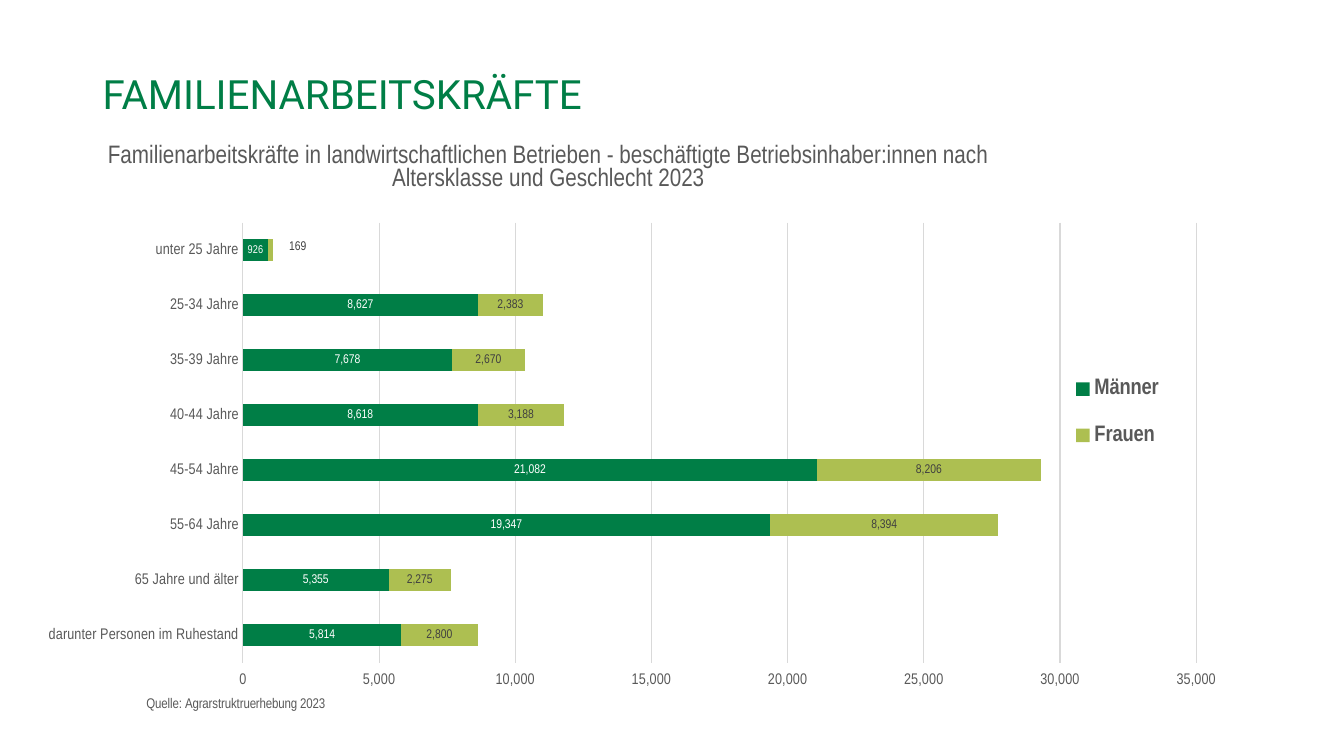
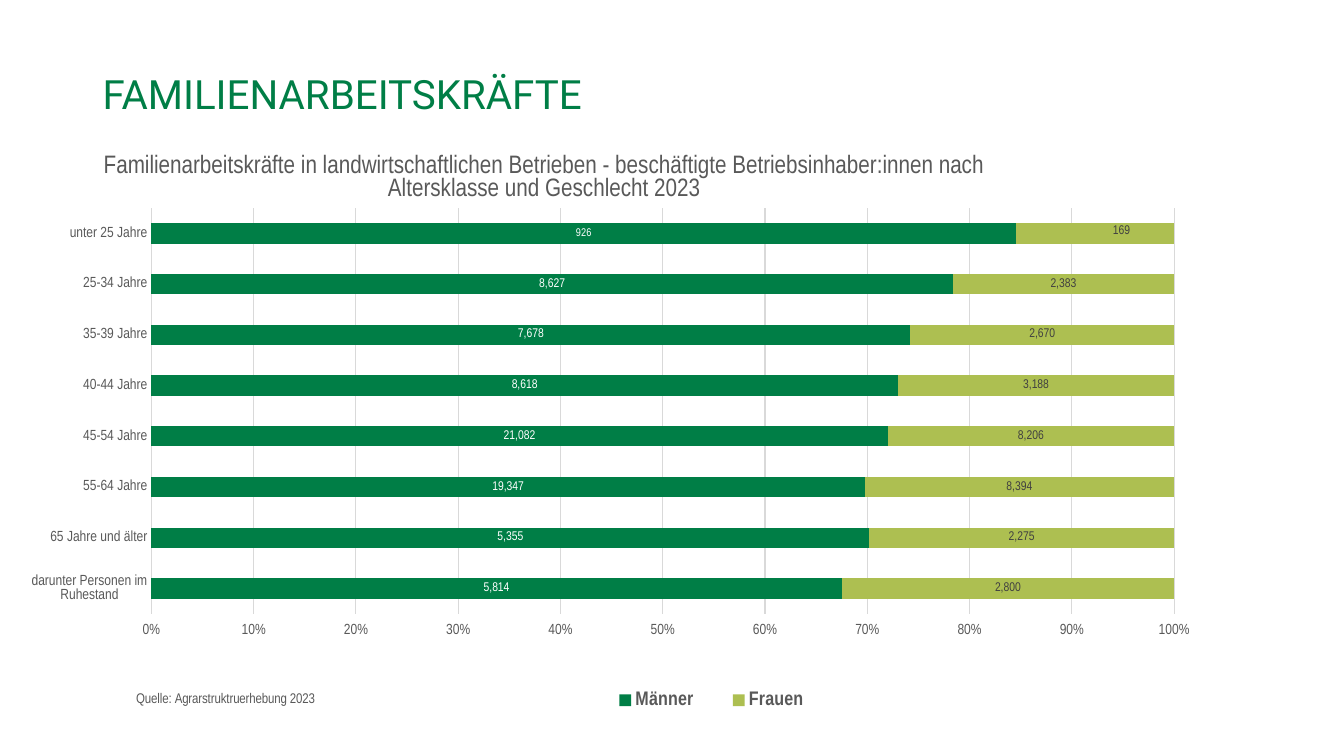
"""Build two slides on family workers in agriculture by age group and sex."""
from dataclasses import dataclass
from typing import Optional

from lxml import etree
from pptx import Presentation
from pptx import util as u
from pptx.chart import data as chart_data
from pptx.dml.color import RGBColor
from pptx.enum import chart as kinds
from pptx.enum import text as text_kinds
from pptx.oxml import ns

COLORS = {
    "green": "007E46",
    "lime": "ADBF51",
    "grey": "595959",
    "dark": "404040",
    "grid": "D9D9D9",
    "white": "FFFFFF",
    "black": "000000",
}
NARROW = "Arial Narrow"
LABEL_NS = "http://schemas.microsoft.com/office/drawing/2012/chart"
LABEL_URI = "{CE6537A1-D6FC-4f65-9D91-7224C49458BB}"
HEADING = "FAMILIENARBEITSKRÄFTE"
SUBTITLE = (
    "Familienarbeitskräfte in landwirtschaftlichen Betrieben - beschäftigte "
    "Betriebsinhaber:innen nach Altersklasse und Geschlecht 2023"
)
SOURCE = "Quelle: Agrarstruktruerhebung 2023"
AGE_GROUPS = (
    "unter 25 Jahre", "25-34 Jahre", "35-39 Jahre", "40-44 Jahre",
    "45-54 Jahre", "55-64 Jahre", "65 Jahre und älter",
    "darunter Personen im Ruhestand",
)


@dataclass(frozen=True)
class Group:
    """One sex with its counts and colours."""
    name: str
    values: tuple[int, ...]
    fill: str
    label: str
    first_label_size: float


@dataclass(frozen=True)
class ChartSpec:
    """What differs between the charts; places are fractions of the chart."""
    kind: kinds.XL_CHART_TYPE
    frame: tuple[float, float, float, float]
    axis_format: str
    axis_size: float
    legend_size: float
    legend_side: kinds.XL_LEGEND_POSITION
    plot: tuple[float, ...]
    legend: tuple[float, ...]
    title: tuple[float, ...]
    source: tuple[float, ...]
    label_shift: tuple[float, ...]
    maximum: Optional[int] = None
    step: Optional[int] = None


GROUPS = (
    Group("Männer", (926, 8627, 7678, 8618, 21082, 19347, 5355, 5814),
          "green", "white", 8),
    Group("Frauen", (169, 2383, 2670, 3188, 8206, 8394, 2275, 2800),
          "lime", "dark", 9),
)
CHARTS = (
    ChartSpec(
        kind=kinds.XL_CHART_TYPE.BAR_STACKED,
        frame=(0.86, 2.72, 30.07, 15.62),
        axis_format="#,##0", axis_size=11, legend_size=16,
        legend_side=kinds.XL_LEGEND_POSITION.RIGHT,
        plot=(0.175, 0.185, 0.799, 0.71),
        legend=(0.858, 0.395, 0.1, 0.192),
        title=(0.058, 0.048), source=(0.092, 0.947),
        label_shift=(0.023, -0.005), maximum=35000, step=5000,
    ),
    ChartSpec(
        kind=kinds.XL_CHART_TYPE.BAR_STACKED_100,
        frame=(0.61, 3.1, 29.97, 15.09),
        axis_format="0%", axis_size=10.5, legend_size=14,
        legend_side=kinds.XL_LEGEND_POSITION.BOTTOM,
        plot=(0.107, 0.142, 0.86, 0.678),
        legend=(0.473, 0.934, 0.21, 0.06),
        title=(0.063, 0.042), source=(0.092, 0.947),
        label_shift=(0.022, -0.004),
    ),
)


def rgb(name: str) -> RGBColor:
    """Return a palette colour."""
    return RGBColor.from_string(COLORS[name])


def style_font(font, *, size: float, color: str = "grey",
               name: str = NARROW, bold: bool = False) -> None:
    """Set the look of a font."""
    font.size = u.Pt(size)
    font.name = name
    font.bold = bold
    font.color.rgb = rgb(color)


def write_text(frame, text: str, *, spacing: Optional[float] = None, **look) -> None:
    """Write one formatted paragraph into a text frame."""
    para = frame.paragraphs[0]
    para.line_spacing = spacing
    span = para.add_run()
    span.text = text
    style_font(span.font, **look)


def place(parent, after: Optional[str], position: tuple[float, ...],
          *, edge: bool = True, inner: bool = False) -> None:
    """Give a chart part a manual layout."""
    for old in parent.findall(ns.qn("c:layout")):
        parent.remove(old)
    layout = etree.Element(ns.qn("c:layout"))
    manual = etree.SubElement(layout, ns.qn("c:manualLayout"))
    settings = [("layoutTarget", "inner")] if inner else []
    if edge:
        settings += [("xMode", "edge"), ("yMode", "edge")]
    settings += [(key, str(value)) for key, value in zip("xywh", position)]
    for key, value in settings:
        etree.SubElement(manual, ns.qn(f"c:{key}")).set("val", value)
    if after is None:
        parent.insert(0, layout)
    else:
        parent.find(ns.qn(after)).addnext(layout)


def hide_leader_lines(chart) -> None:
    """Switch off the lines between moved labels and their bars."""
    for labels in chart.element.xpath(".//c:ser/c:dLbls"):
        for leader in labels.findall(ns.qn("c:showLeaderLines")):
            leader.set("val", "0")
        extensions = etree.SubElement(labels, ns.qn("c:extLst"))
        extension = etree.SubElement(
            extensions, ns.qn("c:ext"), nsmap={"c15": LABEL_NS}, uri=LABEL_URI)
        etree.SubElement(extension, f"{{{LABEL_NS}}}showLeaderLines", val="0")


def style_axes(chart, spec: ChartSpec) -> None:
    """Format the age axis and the value axis."""
    ages, values = chart.category_axis, chart.value_axis
    for axis in (ages, values):
        axis.major_tick_mark = axis.minor_tick_mark = kinds.XL_TICK_MARK.NONE
        style_font(axis.tick_labels.font, size=spec.axis_size)
    ages.reverse_order = True
    ages.has_major_gridlines = False
    values.tick_label_position = kinds.XL_TICK_LABEL_POSITION.HIGH
    values.has_major_gridlines = True
    for line in (ages.format.line, values.major_gridlines.format.line):
        line.color.rgb = rgb("grid")
        line.width = u.Pt(0.75)
    values.format.line.fill.background()
    values.tick_labels.number_format = spec.axis_format
    values.tick_labels.number_format_is_linked = False
    values.minimum_scale = 0
    if spec.maximum is not None:
        values.maximum_scale = spec.maximum
        values.major_unit = spec.step
    write_text(values.axis_title.text_frame, SOURCE, size=10)


def style_series(series, group: Group) -> None:
    """Colour one series and its value labels."""
    series.format.fill.solid()
    series.format.fill.fore_color.rgb = rgb(group.fill)
    series.invert_if_negative = False
    labels = series.data_labels
    labels.show_value = True
    labels.number_format = "#,##0"
    labels.number_format_is_linked = False
    first = series.points[0].data_label
    for label, size in ((labels, 9), (first, group.first_label_size)):
        label.position = kinds.XL_LABEL_POSITION.CENTER
        style_font(label.font, size=size, color=group.label)


def add_bar_chart(page, spec: ChartSpec) -> None:
    """Add a stacked bar chart of the age groups."""
    table = chart_data.CategoryChartData(number_format="#,##0")
    table.categories = AGE_GROUPS
    for group in GROUPS:
        table.add_series(group.name, group.values)
    chart = page.shapes.add_chart(spec.kind, *map(u.Cm, spec.frame), table).chart
    style_font(chart.font, size=10, color="black", name="Arial")
    chart.has_title = True
    write_text(chart.chart_title.text_frame, SUBTITLE, size=18)
    chart.has_legend = True
    chart.legend.position = spec.legend_side
    chart.legend.include_in_layout = False
    style_font(chart.legend.font, size=spec.legend_size, bold=True)
    style_axes(chart, spec)
    bars = chart.plots[0]
    bars.gap_width, bars.overlap = 150, 100
    bars.vary_by_categories = False
    for series, group in zip(bars.series, GROUPS):
        style_series(series, group)
    hide_leader_lines(chart)

    def part(query: str):
        """Return the last chart element that a query finds."""
        return chart.element.xpath(query)[-1]

    place(part("c:chart/c:plotArea"), None, spec.plot, inner=True)
    place(part("c:chart/c:title"), "c:tx", spec.title)
    place(part("c:chart/c:legend"), "c:legendPos", spec.legend)
    place(part(".//c:valAx/c:title"), "c:tx", spec.source)
    place(part(".//c:dLbl"), "c:idx", spec.label_shift, edge=False)


def add_heading(page) -> None:
    """Add the shared slide heading."""
    box = page.shapes.add_textbox(u.Cm(2.34), u.Cm(1.85), u.Cm(25.37), u.Cm(1.24))
    box.text_frame.word_wrap = True
    box.text_frame.vertical_anchor = text_kinds.MSO_ANCHOR.MIDDLE
    write_text(box.text_frame, HEADING, size=28.8, color="green",
               name="Roboto", spacing=0.8)


def main() -> None:
    """Build and save the deck."""
    deck = Presentation()
    deck.slide_width, deck.slide_height = u.Cm(33.87), u.Cm(19.05)
    for spec in CHARTS:
        page = deck.slides.add_slide(deck.slide_layouts[6])
        add_bar_chart(page, spec)
        add_heading(page)
    deck.save("out.pptx")


if __name__ == "__main__":
    main()
